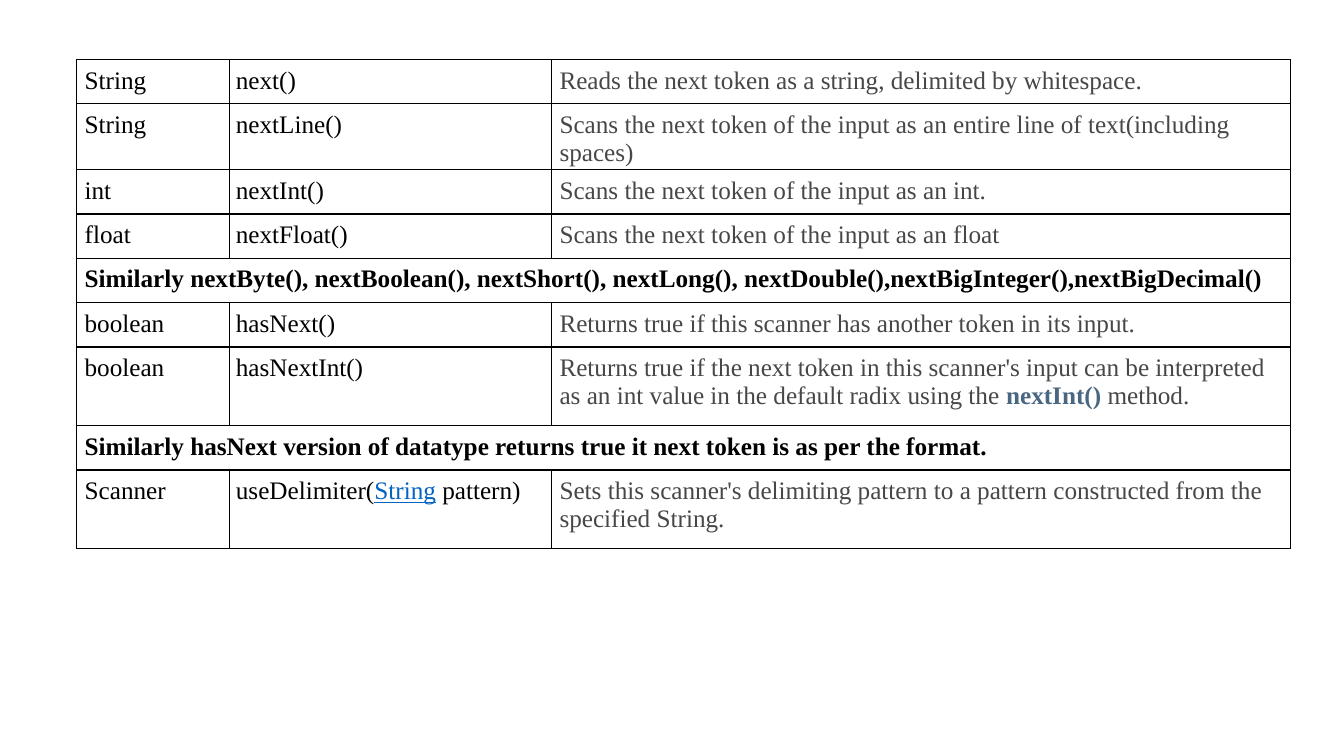
from lxml.etree import SubElement
from pptx import Presentation
from pptx.dml.color import RGBColor
from pptx.oxml.ns import qn
from pptx.util import Inches, Pt

BLACK = RGBColor(0x00, 0x00, 0x00)
WHITE = RGBColor(0xFF, 0xFF, 0xFF)
GREY = RGBColor(0x47, 0x47, 0x47)
STEEL = RGBColor(0x4A, 0x67, 0x82)
LINK = RGBColor(0x05, 0x63, 0xC1)

COLUMNS = (1.52, 3.19, 7.33)
LINE_ROW, TALL_ROW = 0.44, 0.78

METHODS = [
    ("String", "next()", "Reads the next token as a string, delimited by whitespace."),
    ("String", "nextLine()",
     "Scans the next token of the input as an entire line of text(including spaces)"),
    ("int", "nextInt()", "Scans the next token of the input as an int."),
    ("float", "nextFloat()", "Scans the next token of the input as an float"),
    ("Similarly nextByte(), nextBoolean(), nextShort(), nextLong(), "
     "nextDouble(),nextBigInteger(),nextBigDecimal()",),
    ("boolean", "hasNext()", "Returns true if this scanner has another token in its input."),
    ("boolean", "hasNextInt()",
     [("Returns true if the next token in this scanner's input can be interpreted "
       "as an int value in the default radix using the ", {}),
      ("nextInt()", {"color": STEEL, "bold": True}),
      (" method.", {})]),
    ("Similarly hasNext version of datatype returns true it next token is as per the format.",),
    ("Scanner",
     [("useDelimiter(", {}),
      ("String", {"color": LINK, "underline": True}),
      (" pattern)", {})],
     "Sets this scanner's delimiting pattern to a pattern constructed from "
     "the specified String."),
]
TALL_METHODS = (6, 8)


def add_text(paragraph, text, color=BLACK, bold=False, underline=False, size=18):
    """Append one formatted run to a paragraph."""
    run = paragraph.add_run()
    run.text = text
    font = run.font
    font.name = "Times New Roman"
    font.size = Pt(size)
    font.bold = bold
    font.underline = underline
    font.color.rgb = color


def frame_cell(cell):
    """Give a cell a white fill and thin black borders."""
    properties = cell._tc.get_or_add_tcPr()
    for side in ("a:lnL", "a:lnR", "a:lnT", "a:lnB"):
        border = SubElement(properties, qn(side), w=str(Pt(1)))
        ink = SubElement(border, qn("a:solidFill"))
        SubElement(ink, qn("a:srgbClr"), val=str(BLACK))
    cell.fill.solid()
    cell.fill.fore_color.rgb = WHITE


def fill_cell(cell, content, column, bold):
    """Write plain or mixed content with the manner of its column."""
    cell.margin_left = Inches(0.06 if column == 1 else 0.08)
    cell.margin_top = Inches(0.07)
    cell.margin_right = cell.margin_bottom = Inches(0.03)
    paragraph = cell.text_frame.paragraphs[0]
    if column == 2:
        paragraph.space_before, paragraph.space_after = Pt(2.2), Pt(1.5)
    base = {"color": GREY if column == 2 else BLACK, "bold": bold}
    pieces = [(content, {})] if isinstance(content, str) else content
    for text, style in pieces:
        add_text(paragraph, text, **{**base, **style})


def add_method_table(slide, left, top):
    """Place the table of Scanner methods with its corner at left, top."""
    heights = [TALL_ROW if row in TALL_METHODS else LINE_ROW for row in range(len(METHODS))]
    methods = slide.shapes.add_table(
        len(METHODS), len(COLUMNS), Inches(left), Inches(top),
        Inches(sum(COLUMNS)), Inches(sum(heights))).table
    methods.first_row = methods.horz_banding = False
    for column, width in zip(methods.columns, COLUMNS):
        column.width = Inches(width)
    for row, (height, contents) in enumerate(zip(heights, METHODS)):
        methods.rows[row].height = Inches(height)
        for column in range(len(COLUMNS)):
            frame_cell(methods.cell(row, column))
        is_note = len(contents) == 1
        if is_note:
            methods.cell(row, 0).merge(methods.cell(row, len(COLUMNS) - 1))
        for column, content in enumerate(contents):
            fill_cell(methods.cell(row, column), content, column, is_note)


def main():
    """Build the slide and save it."""
    deck = Presentation()
    deck.slide_width, deck.slide_height = Inches(13.33), Inches(7.5)
    slide = deck.slides.add_slide(deck.slide_layouts[6])
    add_method_table(slide, 0.76, 0.59)
    deck.save("out.pptx")


if __name__ == "__main__":
    main()
